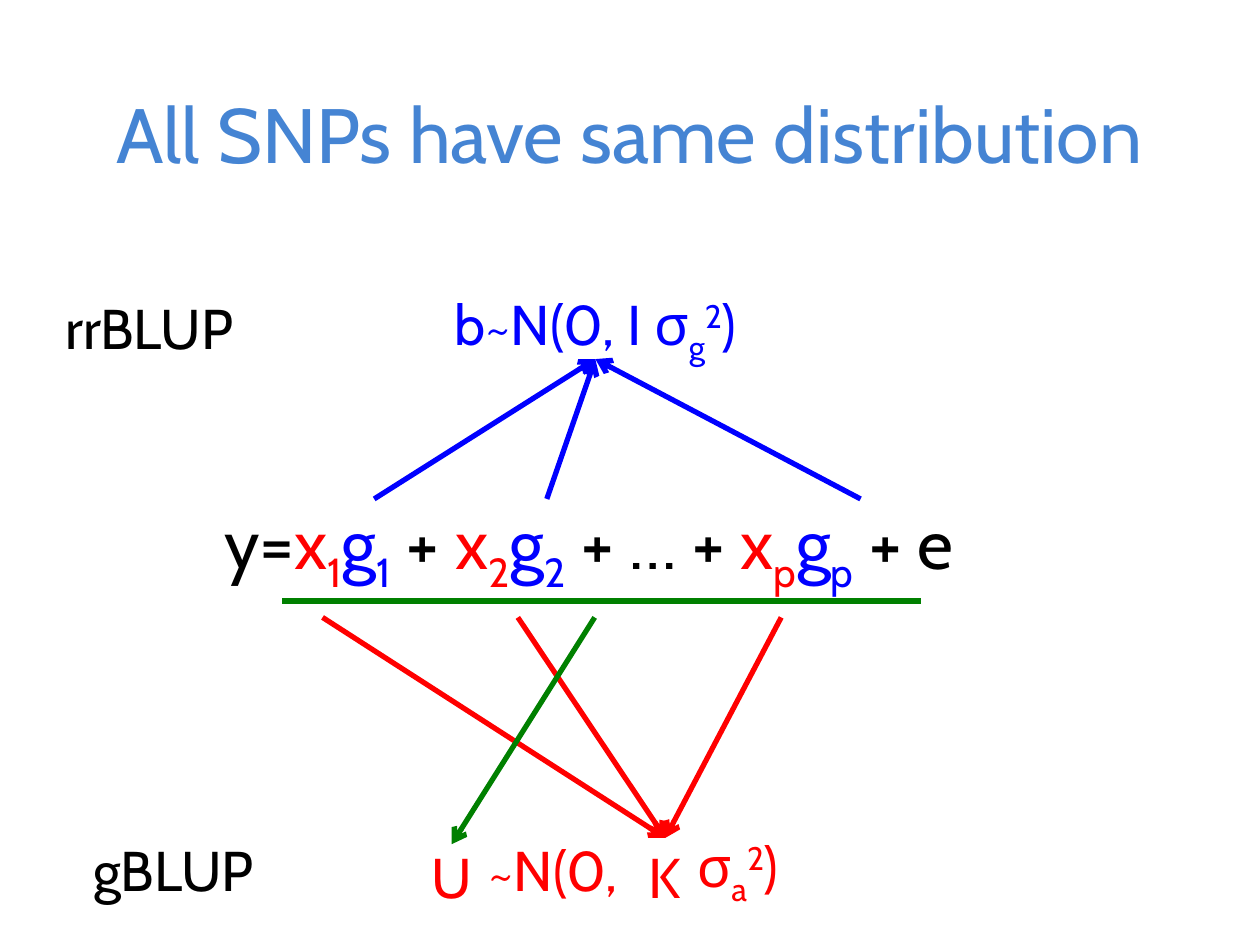
from pptx import Presentation, util as u
from pptx.dml.color import RGBColor
from pptx.enum import shapes, text
from pptx.oxml.ns import qn
from lxml import etree

BLACK, RED, BLUE, GREEN = "000000", "FF0000", "0000FF", "008000"
SUB, SUP = -25, 30

prs = Presentation()
prs.slide_width, prs.slide_height = u.Inches(10), u.Inches(7.5)
s = prs.slides.add_slide(prs.slide_layouts[5])


def add_runs(sp, runs, size, align=text.PP_ALIGN.CENTER):
    """Fill a shape's first paragraph with (text, colour, baseline) runs."""
    tf = sp.text_frame
    tf.word_wrap = True
    tf.vertical_anchor = text.MSO_ANCHOR.MIDDLE
    p = tf.paragraphs[0]
    p.alignment = align
    for words, colour, baseline in runs:
        r = p.add_run()
        r.text = words
        r.font.name, r.font.size = "Cabin", u.Pt(size)
        r.font.color.rgb = RGBColor.from_string(colour)
        if baseline:
            r.font._element.set("baseline", str(baseline * 1000))


def add_line(start, end, colour, arrow=True):
    c = s.shapes.add_connector(shapes.MSO_CONNECTOR.STRAIGHT,
                               *[u.Inches(v) for v in (*start, *end)])
    c.line.color.rgb = RGBColor.from_string(colour)
    c.line.width = u.Pt(3)
    if arrow:
        etree.SubElement(c.line._get_or_add_ln(), qn("a:tailEnd"), type="arrow")
    etree.SubElement(c._element.spPr, qn("a:effectLst"))
    return c


# Title
title = s.shapes.title
title.left, title.top, title.width, title.height = [
    u.Inches(v) for v in (0.5, 0.37, 9, 1.37)]
add_runs(title, [("All SNPs have same distribution", "4584D3", 0)], 44)

# Model equation: one red x and blue g for each marker
equation = [("y=", BLACK, 0)]
for index, after in (("1", " + "), ("2", " + … + "), ("p", " + e")):
    equation += [("x", RED, 0), (index, RED, SUB),
                 ("g", BLUE, 0), (index, BLUE, SUB), (after, BLACK, 0)]
sp = s.shapes.add_textbox(*[u.Inches(v) for v in (1.68, 3.96, 7.4, 0.77)])
add_runs(sp, equation, 40, text.PP_ALIGN.LEFT)

# Method names and their distributions
upper, lower, letter_row = 2.35, 6.65, 6.7
labels = {}
for name, left, top, width, runs in (
        ("rrBLUP", 0.25, upper, 1.87, [("rrBLUP", BLACK, 0)]),
        ("gBLUP", 0.5, lower, 1.76, [("gBLUP", BLACK, 0)]),
        ("b", 3.15, upper, 3.15, [("b~N(0, I σ", BLUE, 0), ("g", BLUE, SUB),
                                  ("2", BLUE, SUP), (")", BLUE, 0)]),
        ("U", 3.2, letter_row, 0.77, [("U", RED, 0)]),
        ("normal", 3.76, lower, 1.26, [("~N(0,", RED, 0)]),
        ("K", 4.92, letter_row, 0.71, [("K", RED, 0)]),
        ("variance", 5.28, lower, 1.15, [("σ", RED, 0), ("a", RED, SUB),
                                         ("2", RED, SUP), (")", RED, 0)])):
    sp = s.shapes.add_textbox(*[u.Inches(v) for v in (left, top, width, 0.5)])
    add_runs(sp, runs, 32)
    labels[name] = sp

# Arrows from the terms to their distributions
above, below, middle = 3.96, 4.9, 4.72
for x in (2.97, 4.34, 6.83):
    add_line((x, above), (middle, 2.85), BLUE).end_connect(labels["b"], 2)
for x in (2.56, 4.11, 6.2):
    add_line((x, below), (5.28, lower), RED)
add_line((2.24, 4.77), (7.31, 4.77), GREEN, arrow=False)
add_line((middle, below), (3.59, letter_row), GREEN).end_connect(labels["U"], 0)

prs.save("out.pptx")
